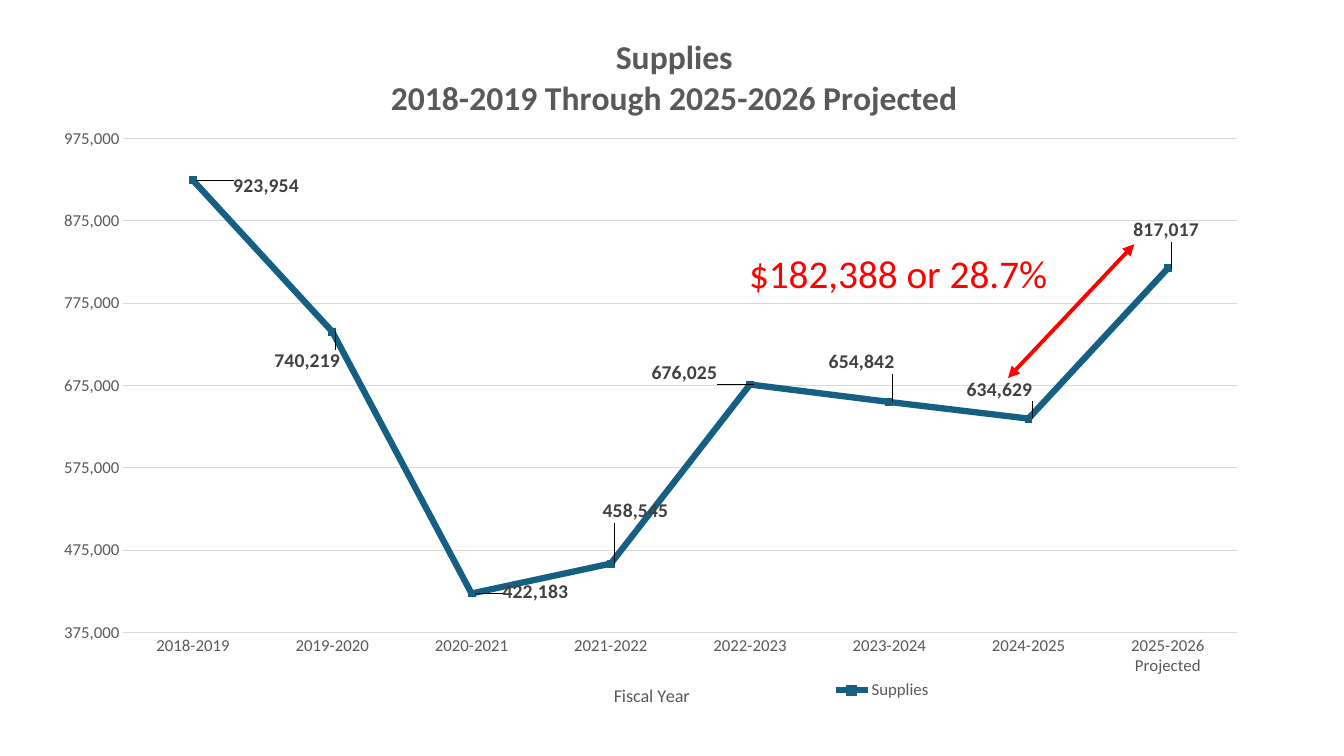
"""Build a slide with a line chart of supplies spending by fiscal year."""
from dataclasses import dataclass

from lxml.etree import SubElement
from pptx import Presentation
from pptx.chart.data import CategoryChartData
from pptx.dml.color import RGBColor
from pptx.enum.chart import XL_CHART_TYPE as ChartType
from pptx.enum.chart import XL_LABEL_POSITION as LabelSide
from pptx.enum.chart import XL_LEGEND_POSITION as LegendSide
from pptx.enum.chart import XL_TICK_MARK as Tick
from pptx.enum.shapes import MSO_CONNECTOR as Connector
from pptx.oxml import parse_xml
from pptx.oxml.ns import nsdecls, qn
from pptx.util import Inches, Length, Pt

WIDTH, HEIGHT = Inches(13.33), Inches(7.5)
FONT = "Calibri"
GREY, DARK, PALE, BLUE, RED = "595959", "404040", "D9D9D9", "156082", "FF0000"


@dataclass(frozen=True)
class FiscalYear:
    """A year's spending and its label's shift in percent of the chart."""
    name: str
    spending: int
    shift_x: float
    shift_y: float


YEARS = [
    FiscalYear("2018-2019", 923954, 2.5, 0.8),
    FiscalYear("2019-2020", 740219, -5, 4.2),
    FiscalYear("2020-2021", 422183, 1.8, -0.2),
    FiscalYear("2021-2022", 458545, -1.2, -7.5),
    FiscalYear("2022-2023", 676025, -8.1, -1.7),
    FiscalYear("2023-2024", 654842, -5.2, -5.7),
    FiscalYear("2024-2025", 634629, -5.3, -4.2),
    FiscalYear("2025-2026 Projected", 817017, -3.2, -5.5),
]


def across(percent: float) -> Length:
    """Return a percentage of the slide width."""
    return Length(int(WIDTH * percent / 100))


def down(percent: float) -> Length:
    """Return a percentage of the slide height."""
    return Length(int(HEIGHT * percent / 100))


def color(code: str) -> RGBColor:
    """Turn a hex string into a colour."""
    return RGBColor.from_string(code)


def style(font, size: float, code: str, bold: bool = False) -> None:
    """Set face, size, colour and weight of a font."""
    font.name, font.size, font.bold = FONT, Pt(size), bold
    font.color.rgb = color(code)


def stroke(line, code: str, width: float) -> None:
    """Set colour and width of a line."""
    line.color.rgb = color(code)
    line.width = Pt(width)


def lay_out(part, after: str | None, modes: dict[str, str], **shares: float) -> None:
    """Give a chart part a manual layout, in percent of the chart."""
    for old in part.findall(qn("c:layout")):
        part.remove(old)
    layout = parse_xml(f"<c:layout {nsdecls('c')}><c:manualLayout/></c:layout>")
    settings = modes | {key: f"{share / 100:.4f}" for key, share in shares.items()}
    for key, setting in settings.items():
        SubElement(layout[0], qn(f"c:{key}")).set("val", setting)
    anchor = part.find(qn(after)) if after else None
    part.insert(0 if anchor is None else part.index(anchor) + 1, layout)


def write_title(title, text: str, size: float, bold: bool, x: float, y: float) -> None:
    """Fill, style and place a chart or axis title."""
    title.text_frame.text = text
    for paragraph in title.text_frame.paragraphs:
        style(paragraph.font, size, GREY, bold)
    lay_out(title._element, "c:tx", EDGE, x=x, y=y)


EDGE = {"xMode": "edge", "yMode": "edge"}


def style_axes(chart) -> None:
    """Format both axes and the gridlines."""
    years, dollars = chart.category_axis, chart.value_axis
    for axis in (years, dollars):
        axis.major_tick_mark = axis.minor_tick_mark = Tick.NONE
        style(axis.tick_labels.font, 12, GREY)
    stroke(years.format.line, PALE, 0.75)
    write_title(years.axis_title, "Fiscal Year", 13, False, 45.4, 96.2)
    dollars.minimum_scale, dollars.maximum_scale = 375000, 1000000
    dollars.major_unit = 100000
    dollars.format.line.fill.background()
    dollars.tick_labels.number_format = "#,##0"
    dollars.tick_labels.number_format_is_linked = False
    stroke(dollars.major_gridlines.format.line, PALE, 0.75)


def draw_chart(slide) -> None:
    """Draw the spending line with its labels, titles and legend."""
    spending = CategoryChartData(number_format="#,##0")
    spending.categories = [year.name for year in YEARS]
    spending.add_series("Supplies", [year.spending for year in YEARS])
    chart = slide.shapes.add_chart(ChartType.LINE, across(1.2), down(1.07),
                                   across(97.4), down(93.3), spending).chart
    style(chart.font, 12, GREY)
    write_title(chart.chart_title, "Supplies\n2018-2019 Through 2025-2026 Projected",
                24, True, 28.4, 3.6)
    style_axes(chart)
    plot_area = chart._chartSpace.chart.plotArea
    lay_out(plot_area, None, {"layoutTarget": "inner"} | EDGE, x=8.2, y=15.7, w=85.1, h=73.6)

    chart.has_legend = True
    chart.legend.position = LegendSide.BOTTOM
    chart.legend.include_in_layout = False
    style(chart.legend.font, 12, GREY)
    lay_out(chart.legend._element, "c:legendPos", EDGE, x=62.2, y=95.6)

    chart.plots[0].vary_by_categories = False
    supplies = chart.plots[0].series[0]
    supplies.smooth = False
    supplies.marker.style = None
    stroke(supplies.format.line, BLUE, 4.5)
    for index, year in enumerate(YEARS):
        label = supplies.points[index].data_label
        style(label.font, 14, DARK, True)
        label.position = LabelSide.RIGHT
        entry = supplies._element.find(qn("c:dLbls")).findall(qn("c:dLbl"))[index]
        lay_out(entry, "c:idx", {}, x=year.shift_x, y=year.shift_y)


def draw_increase(slide) -> None:
    """Draw the double arrow and the amount of the projected increase."""
    arrow = slide.shapes.add_connector(Connector.STRAIGHT, across(75), down(50),
                                       across(84.4), down(32.3))
    stroke(arrow.line, RED, 2.75)
    properties = arrow._element.spPr
    for end in ("a:headEnd", "a:tailEnd"):
        SubElement(properties.find(qn("a:ln")), qn(end)).set("type", "triangle")
    SubElement(properties, qn("a:effectLst"))

    increase = slide.shapes.add_textbox(across(55), down(32.3), across(24), down(7.6))
    increase.text_frame.word_wrap = False
    amount = increase.text_frame.paragraphs[0]
    amount.text = "$182,388 or 28.7%"
    style(amount.font, 28, RED)


def main() -> None:
    """Build and save the slide."""
    deck = Presentation()
    deck.slide_width, deck.slide_height = WIDTH, HEIGHT
    slide = deck.slides.add_slide(deck.slide_layouts[6])
    draw_chart(slide)
    draw_increase(slide)
    deck.save("out.pptx")


if __name__ == "__main__":
    main()
